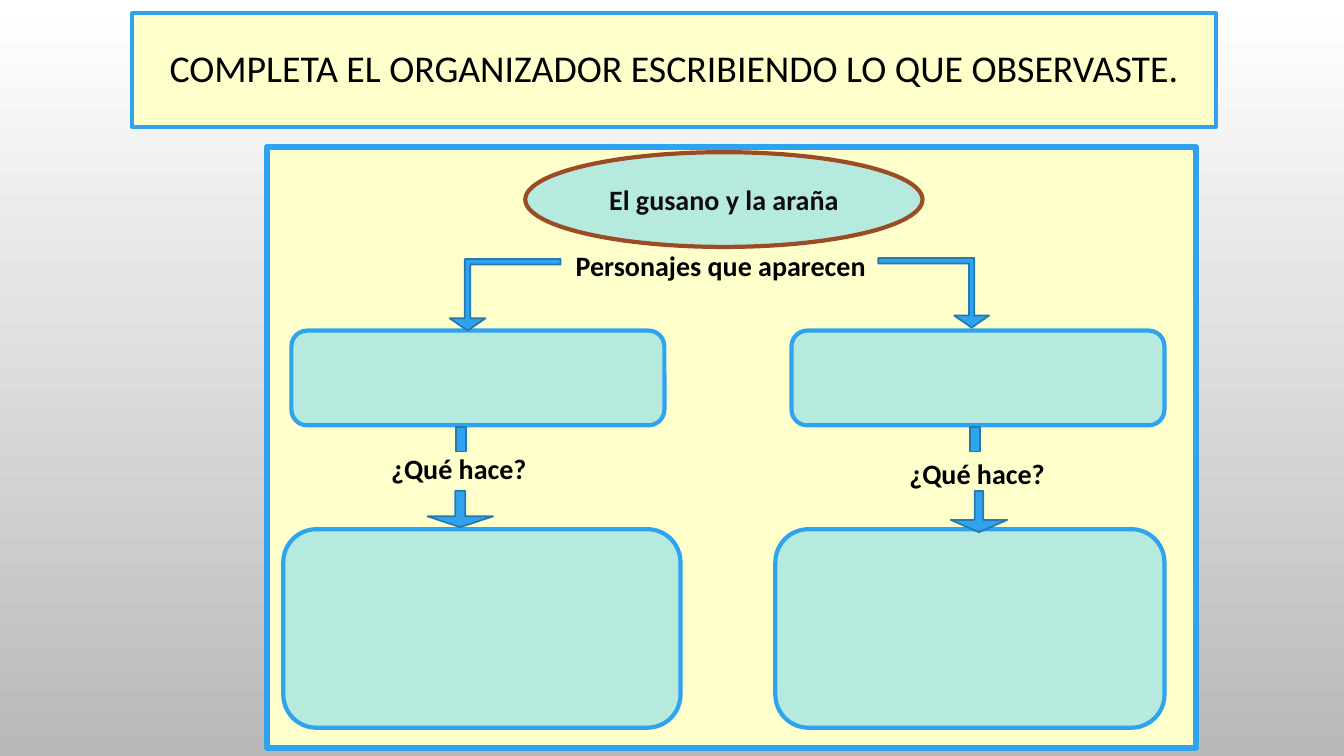
from dataclasses import dataclass
from typing import Any, Optional

from pptx import Presentation
from pptx import util as u
from pptx.dml import color
from pptx.enum import shapes, text

SHAPE = shapes.MSO_SHAPE


@dataclass(frozen=True)
class Theme:
    font: str = "Calibri"
    title_size: float = 27
    label_size: float = 20
    black: str = "000000"
    soft_black: str = "0D0D0D"
    cream: str = "FFFFCC"
    mint: str = "B7EADE"
    blue: str = "2FA3EE"
    dark_blue: str = "2379B0"
    brown: str = "9B4C25"
    sky: tuple[str, str] = ("FFFFFF", "B9B9B9")
    panel_line: float = 4.5
    box_line: float = 3
    arrow_line: float = 1.25


THEME = Theme()


@dataclass(frozen=True)
class Box:
    """A filled, outlined shape; at is left, top, width, height in inches."""
    at: tuple[float, float, float, float]
    kind: Any = SHAPE.ROUNDED_RECTANGLE
    fill: str = THEME.mint
    line: str = THEME.blue
    weight: float = THEME.box_line
    adjust: tuple[float, ...] = ()
    rotation: float = 0
    flipped: bool = False
    words: Optional[str] = None


@dataclass(frozen=True)
class Label:
    at: tuple[float, float, float, float]
    words: str


def arrow(at: tuple[float, float, float, float], kind: Any, **extra: Any) -> Box:
    return Box(at, kind, THEME.blue, THEME.dark_blue, THEME.arrow_line, **extra)


BENT = {"adjust": (0.077, 0.25, 0.173), "rotation": 180}
DOWN = {"adjust": (0.152, 0.297)}

PANEL = Box((2.65, 1.46, 9.21, 5.96), SHAPE.RECTANGLE, THEME.cream,
            weight=THEME.panel_line)
HEADING = Box((1.31, 0.13, 10.75, 1.13), fill=THEME.cream,
              words="COMPLETA EL ORGANIZADOR ESCRIBIENDO LO QUE OBSERVASTE.")
STORY = Box((5.21, 1.51, 3.94, 0.94), SHAPE.OVAL, line=THEME.brown,
            words="El gusano y la araña")
ANSWERS = [
    Box((2.89, 3.28, 3.7, 0.94)),
    Box((7.85, 3.28, 3.7, 0.94)),
    Box((2.81, 5.25, 3.94, 1.97)),
    Box((7.69, 5.25, 3.86, 1.97)),
]
ARROWS = [
    arrow((4.46, 2.57, 1.1, 0.71), SHAPE.BENT_UP_ARROW, **BENT),
    arrow((8.71, 2.56, 1.1, 0.69), SHAPE.BENT_UP_ARROW, flipped=True, **BENT),
    arrow((4.24, 4.87, 0.65, 0.36), SHAPE.DOWN_ARROW, **DOWN),
    arrow((9.43, 4.87, 0.56, 0.41), SHAPE.DOWN_ARROW, **DOWN),
    arrow((4.52, 4.24, 0.1, 0.24), SHAPE.RECTANGLE),
    arrow((9.62, 4.24, 0.1, 0.24), SHAPE.RECTANGLE),
]
LABELS = [
    Label((5.61, 2.42, 3.11, 0.44), "Personajes que aparecen"),
    Label((3.78, 4.43, 1.58, 0.44), "¿Qué hace?"),
    Label((8.92, 4.48, 1.58, 0.44), "¿Qué hace?"),
]


def apply(target: Any, values: dict[str, Any]) -> None:
    for name, value in values.items():
        setattr(target, name, value)


def rgb(value: str) -> color.RGBColor:
    return color.RGBColor.from_string(value)


def write(shape: Any, words: str, size: float, ink: str, bold: bool,
          frame: dict[str, Any], paragraph: dict[str, Any]) -> None:
    apply(shape.text_frame, frame)
    line = shape.text_frame.paragraphs[0]
    apply(line, paragraph)
    run = line.add_run()
    run.text = words
    apply(run.font, {"name": THEME.font, "size": u.Pt(size), "bold": bold})
    run.font.color.rgb = rgb(ink)


def paint(shape: Any, box: Box) -> None:
    shape.fill.solid()
    shape.fill.fore_color.rgb = rgb(box.fill)
    shape.line.color.rgb = rgb(box.line)
    shape.line.width = u.Pt(box.weight)


def draw_box(slide: Any, box: Box) -> None:
    shape = slide.shapes.add_shape(box.kind, *map(u.Inches, box.at))
    shape.shadow.inherit = False
    paint(shape, box)
    for index, value in enumerate(box.adjust):
        shape.adjustments[index] = value
    shape.rotation = box.rotation
    if box.flipped:
        shape._element.spPr.xfrm.set("flipH", "1")
    if box.words:
        write(shape, box.words, THEME.label_size, THEME.soft_black, True,
              {"word_wrap": True, "vertical_anchor": text.MSO_ANCHOR.MIDDLE},
              {"alignment": text.PP_ALIGN.CENTER})


def draw_label(slide: Any, label: Label) -> None:
    shape = slide.shapes.add_textbox(*map(u.Inches, label.at))
    write(shape, label.words, THEME.label_size, THEME.black, True,
          {"word_wrap": False, "auto_size": text.MSO_AUTO_SIZE.SHAPE_TO_FIT_TEXT},
          {"alignment": text.PP_ALIGN.LEFT})


def draw_heading(slide: Any, box: Box) -> None:
    title = slide.shapes.title
    apply(title, dict(zip(("left", "top", "width", "height"),
                          map(u.Inches, box.at))))
    paint(title, box)
    write(title, box.words, THEME.title_size, THEME.black, False,
          {"word_wrap": True, "auto_size": text.MSO_AUTO_SIZE.NONE,
           "vertical_anchor": text.MSO_ANCHOR.MIDDLE},
          {"alignment": text.PP_ALIGN.CENTER, "line_spacing": 0.9})


def draw_background(slide: Any) -> None:
    fill = slide.background.fill
    fill.gradient()
    fill.gradient_angle = 270
    for stop, position, shade in zip(fill.gradient_stops, (0, 1), THEME.sky):
        stop.position = position
        stop.color.rgb = rgb(shade)


def main() -> None:
    deck = Presentation()
    apply(deck, {"slide_width": u.Inches(13.33), "slide_height": u.Inches(7.5)})
    slide = deck.slides.add_slide(deck.slide_layouts[5])

    # Background and heading
    draw_background(slide)
    draw_heading(slide, HEADING)

    # Organizer: panel, story, answer boxes and arrows
    for box in [PANEL, STORY, *ANSWERS, *ARROWS]:
        draw_box(slide, box)

    # Questions between the boxes
    for label in LABELS:
        draw_label(slide, label)

    deck.save("out.pptx")


if __name__ == "__main__":
    main()
